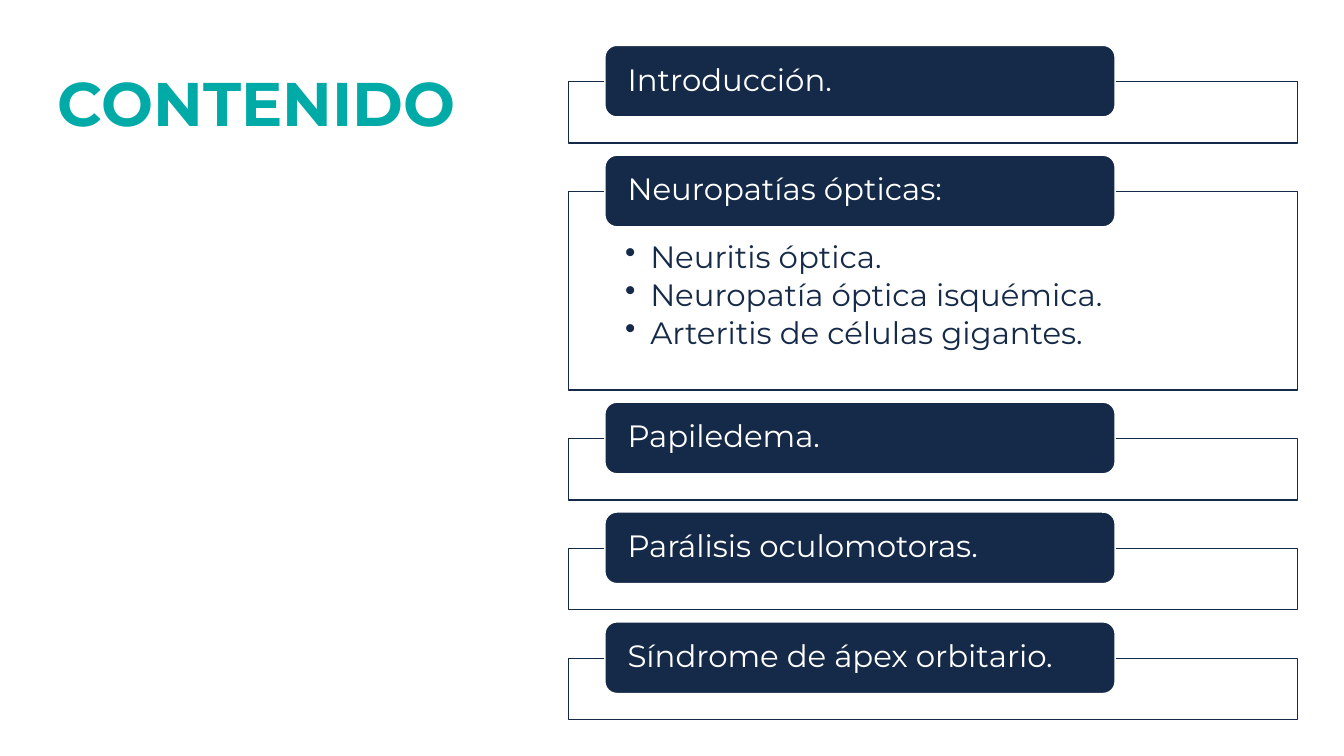
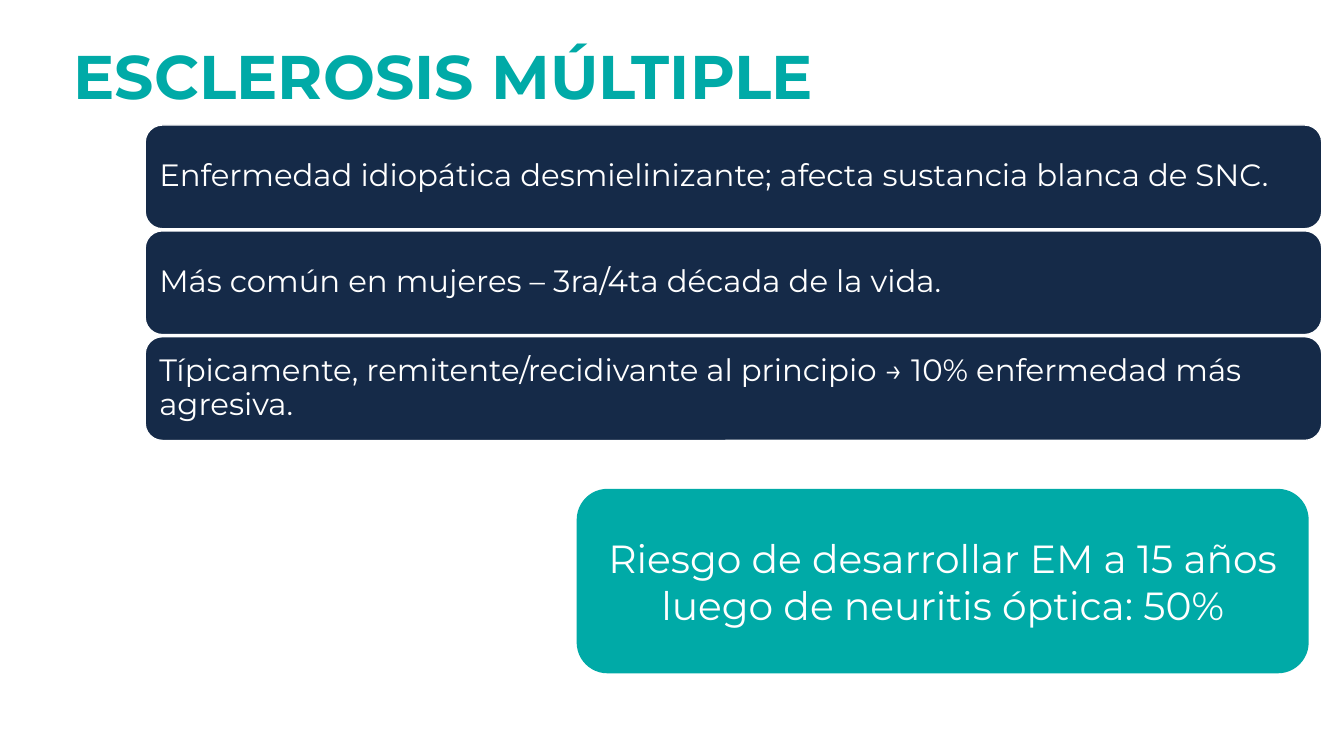
from pptx import Presentation
from pptx.dml.color import RGBColor
from pptx.enum.shapes import MSO_SHAPE
from pptx.enum.text import MSO_ANCHOR, PP_ALIGN
from pptx.oxml.ns import qn
from pptx.util import Inches, Pt

RECT, ROUNDED = MSO_SHAPE.RECTANGLE, MSO_SHAPE.ROUNDED_RECTANGLE
TOP, MIDDLE = MSO_ANCHOR.TOP, MSO_ANCHOR.MIDDLE
LEFT, CENTER = PP_ALIGN.LEFT, PP_ALIGN.CENTER

FONT = "Montserrat"
NAVY, TEAL, WHITE = "152A48", "00AAA7", "FFFFFF"
DEFAULT_INSETS = (0.1, 0.05, 0.1, 0.05)


def rgb(hex_color):
    return RGBColor.from_string(hex_color)


class Deck:
    """Holds the shared style and the current slide."""

    def __init__(self):
        self.prs = Presentation()
        self.prs.slide_width = Inches(13.33)
        self.prs.slide_height = Inches(7.5)
        self.slide = None

    def new_slide(self, title, left, top, width):
        self.slide = self.prs.slides.add_slide(self.prs.slide_layouts[6])
        box = self.slide.shapes.add_textbox(
            Inches(left), Inches(top), Inches(width), Inches(1.45))
        self.set_text(box, [title], size=44, color=TEAL, bold=True)

    def set_text(self, shape, lines, size=22, color=WHITE, bold=False, anchor=MIDDLE,
                 align=LEFT, insets=DEFAULT_INSETS, spacing=0.9, bullets=False):
        frame = shape.text_frame
        frame.word_wrap = True
        frame.vertical_anchor = anchor
        (frame.margin_left, frame.margin_top,
         frame.margin_right, frame.margin_bottom) = map(Inches, insets)
        frame.text = "\n".join(lines)
        for paragraph in frame.paragraphs:
            if bullets:
                self.add_bullet(paragraph)
            paragraph.alignment = align
            paragraph.line_spacing = spacing
            font = paragraph.font
            font.name, font.size, font.bold = FONT, Pt(size), bold
            font.color.rgb = rgb(color)

    def add_bullet(self, paragraph):
        props = paragraph._p.get_or_add_pPr()
        props.set("marL", str(Inches(0.25)))
        props.set("indent", str(-Inches(0.25)))
        bullet = props.makeelement(qn("a:buChar"), {"char": "•"})
        props.append(bullet)
        paragraph.space_after = Pt(3.3)

    def panel(self, kind, left, top, width, height, fill, line=None):
        shape = self.slide.shapes.add_shape(
            kind, Inches(left), Inches(top), Inches(width), Inches(height))
        shape.shadow.inherit = False
        shape.fill.solid()
        shape.fill.fore_color.rgb = rgb(fill)
        if line:
            shape.line.color.rgb = rgb(line)
            shape.line.width = Pt(1)
        else:
            shape.line.fill.background()
        return shape

    def section(self, top, height, heading, items):
        """A framed section with its heading tab over the top edge."""
        frame = self.panel(RECT, 5.64, top, 7.23, height, WHITE, NAVY)
        if items:
            self.set_text(frame, items, color=NAVY, anchor=TOP,
                          insets=(0.56, 0.5, 0.56, 0.17), bullets=True)
        tab = self.panel(ROUNDED, 6, top - 0.36, 5.06, 0.71, NAVY, WHITE)
        self.set_text(tab, [heading], insets=(0.19, 0, 0.19, 0))

    def bar(self, top, text):
        shape = self.panel(ROUNDED, 1.44, top, 11.67, 1.03, NAVY, WHITE)
        self.set_text(shape, [text], insets=(0.09,) * 4)


def main():
    deck = Deck()

    # Contents
    deck.new_slide("CONTENIDO", 0.47, 0.33, 4.72)
    sections = [
        ("Introducción.", []),
        ("Neuropatías ópticas:", ["Neuritis óptica.",
                                  "Neuropatía óptica isquémica.",
                                  "Arteritis de células gigantes."]),
        ("Papiledema.", []),
        ("Parálisis oculomotoras.", []),
        ("Síndrome de ápex orbitario.", []),
    ]
    top = 0.81
    for heading, items in sections:
        height = 1.97 if items else 0.61
        deck.section(top, height, heading, items)
        top += height + 0.48

    # Multiple sclerosis: key facts
    deck.new_slide("ESCLEROSIS MÚLTIPLE", 0.63, 0.06, 11.5)
    facts = [
        "Enfermedad idiopática desmielinizante; afecta sustancia blanca de SNC.",
        "Más común en mujeres – 3ra/4ta década de la vida.",
        "Típicamente, remitente/recidivante al principio → 10% enfermedad más agresiva.",
    ]
    for row, fact in enumerate(facts):
        deck.bar(1.24 + row * 1.05, fact)

    # Risk callout
    risk = deck.panel(ROUNDED, 5.72, 4.85, 7.26, 1.83, TEAL)
    deck.set_text(risk, ["Riesgo de desarrollar EM a 15 años luego de neuritis óptica: 50%"],
                  size=28, align=CENTER, spacing=1.0)

    deck.prs.save("out.pptx")


if __name__ == "__main__":
    main()
